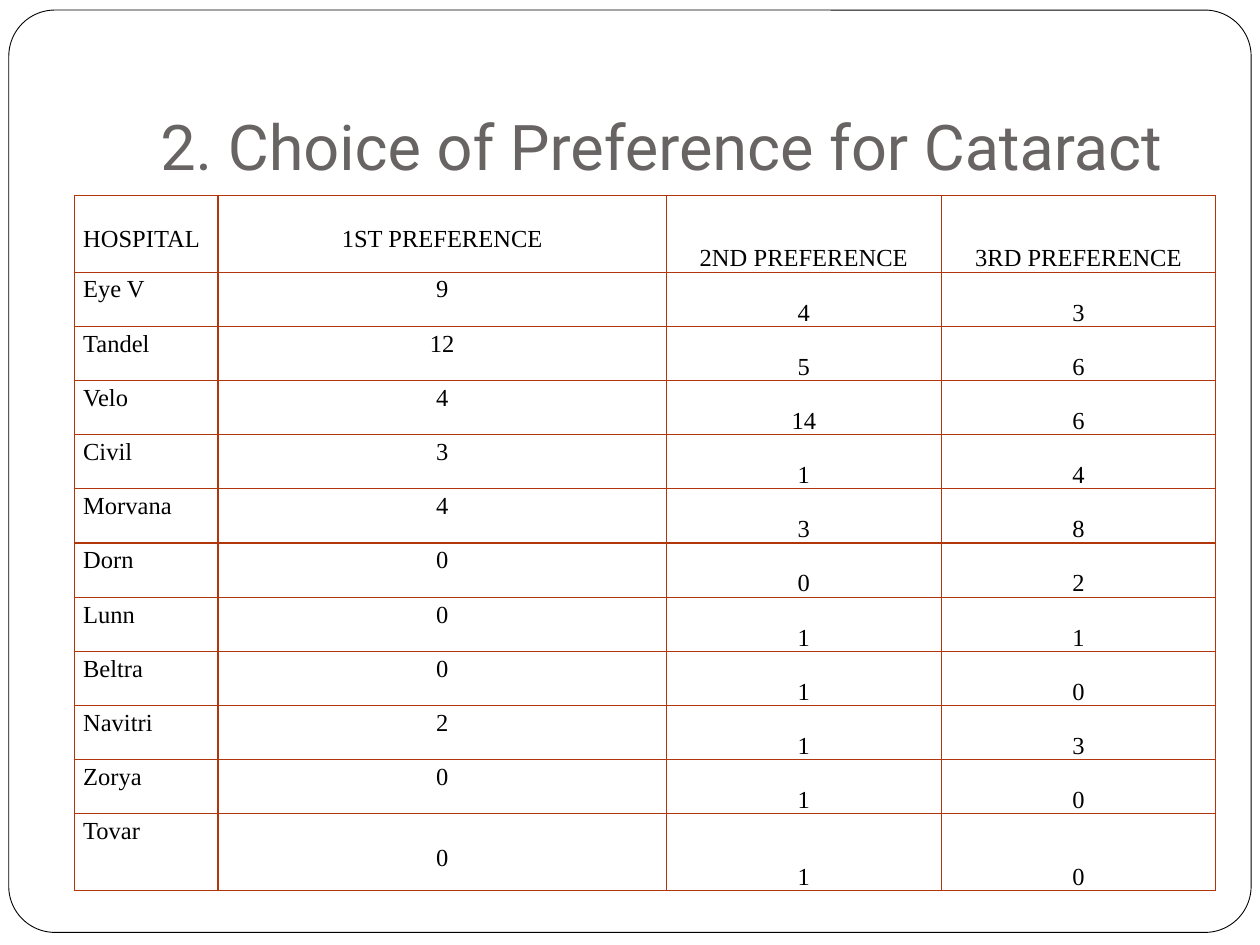
from dataclasses import dataclass

from lxml.etree import SubElement
from pptx import Presentation
from pptx.dml.color import RGBColor
from pptx.enum.shapes import MSO_SHAPE
from pptx.enum.text import MSO_ANCHOR as Anchor, PP_ALIGN as Align
from pptx.oxml.ns import qn
from pptx.util import Inches, Pt


@dataclass(frozen=True)
class Theme:
    paper: str = "FFFFFF"
    ink: str = "000000"
    heading: str = "696464"
    rule: str = "B1360B"
    heading_font: str = "Roboto"
    table_font: str = "Times New Roman"
    heading_size: int = 36
    table_size: int = 14
    rule_width: float = 0.75


theme = Theme()


def style_paragraph(paragraph, font_name, size, color, align):
    paragraph.alignment = align
    paragraph.font.name = font_name
    paragraph.font.size = Pt(size)
    paragraph.font.color.rgb = RGBColor.from_string(color)


def draw_borders(cell):
    properties = cell._tc.get_or_add_tcPr()
    for side in ("lnL", "lnR", "lnT", "lnB"):
        line = SubElement(properties, qn(f"a:{side}"), w=str(Pt(theme.rule_width)))
        fill = SubElement(line, qn("a:solidFill"))
        SubElement(fill, qn("a:srgbClr"), val=theme.rule)


preferences = [
    ("HOSPITAL", "1ST PREFERENCE", "2ND PREFERENCE", "3RD PREFERENCE"),
    ("Eye V", 9, 4, 3),
    ("Tandel", 12, 5, 6),
    ("Velo", 4, 14, 6),
    ("Civil", 3, 1, 4),
    ("Morvana", 4, 3, 8),
    ("Dorn", 0, 0, 2),
    ("Lunn", 0, 1, 1),
    ("Beltra", 0, 1, 0),
    ("Navitri", 2, 1, 3),
    ("Zorya", 0, 1, 0),
    ("Tovar", 0, 1, 0),
]
last = len(preferences) - 1
column_widths = [1.14, 3.56, 2.18, 2.18]
row_heights = [0.61] + [0.43] * (last - 1) + [0.61]
lowered_cells = {(0, 0), (0, 1), (last, 1)}  # start one line further down

prs = Presentation()
prs.slide_width, prs.slide_height = Inches(10), Inches(7.5)
slide = prs.slides.add_slide(prs.slide_layouts[5])

# Rounded frame, behind everything
frame = slide.shapes.add_shape(
    MSO_SHAPE.ROUNDED_RECTANGLE, Inches(0.07), Inches(0.08), Inches(9.86), Inches(7.32))
frame.adjustments[0] = 0.05
frame.shadow.inherit = False
frame.fill.solid()
frame.fill.fore_color.rgb = RGBColor.from_string(theme.paper)
frame.line.color.rgb = RGBColor.from_string(theme.ink)
frame.line.width = Pt(0.5)
slide.shapes._spTree.insert(2, frame._element)

# Title
title = slide.shapes.title
title.left, title.top = Inches(1), Inches(0.3)
title.width, title.height = Inches(8.5), Inches(1.25)
heading = title.text_frame
heading.text = "2. Choice of Preference for Cataract"
heading.vertical_anchor = Anchor.BOTTOM
heading.margin_bottom = Inches(0.1)
style_paragraph(heading.paragraphs[0], theme.heading_font, theme.heading_size,
                theme.heading, Align.CENTER)

# Preference table
table = slide.shapes.add_table(
    len(preferences), len(column_widths), Inches(0.59), Inches(1.55),
    Inches(sum(column_widths)), Inches(sum(row_heights))).table
table.first_row = table.horz_banding = False
for column, width in zip(table.columns, column_widths):
    column.width = Inches(width)
for row, height in zip(table.rows, row_heights):
    row.height = Inches(height)

for r, record in enumerate(preferences):
    for c, entry in enumerate(record):
        cell = table.cell(r, c)
        cell.text = str(entry)
        cell.margin_left = cell.margin_right = Inches(0.07)
        cell.margin_top = Inches(0.21 if (r, c) in lowered_cells else 0)
        cell.margin_bottom = 0
        cell.vertical_anchor = Anchor.TOP if c < 2 else Anchor.BOTTOM
        paragraph = cell.text_frame.paragraphs[0]
        paragraph.line_spacing = 1.15
        style_paragraph(paragraph, theme.table_font, theme.table_size, theme.ink,
                        Align.LEFT if c == 0 else Align.CENTER)
        draw_borders(cell)
        cell.fill.background()

prs.save("out.pptx")
